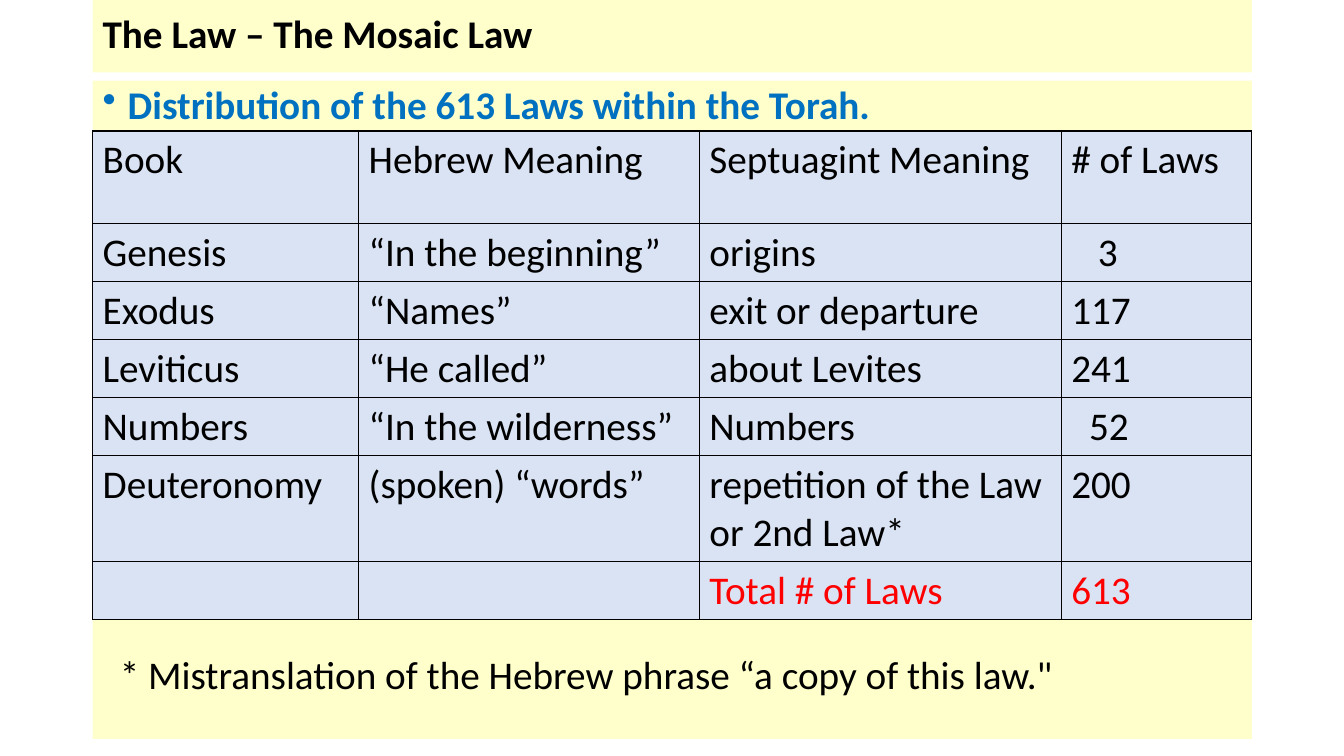
"""Builds the slide on how the 613 laws are spread over the Torah."""
import pptx
import pptx.dml.color
import pptx.enum.shapes
import pptx.enum.text
import pptx.oxml
import pptx.util
from lxml import etree

Pt = pptx.util.Pt

TITLE = "The Law – The Mosaic Law"
HEADING = "Distribution of the 613 Laws within the Torah."
FOOTNOTE = "* Mistranslation of the Hebrew phrase “a copy of this law.\""
BOOKS = [
    ("Book", "Hebrew Meaning", "Septuagint Meaning", "# of Laws"),
    ("Genesis", "“In the beginning”", "origins", "3"),
    ("Exodus", "“Names”", "exit or departure", "117"),
    ("Leviticus", "“He called”", "about Levites", "241"),
    ("Numbers", "“In the wilderness”", "Numbers", "52"),
    ("Deuteronomy", "(spoken) “words”", "repetition of the Law or 2nd Law*", "200"),
    ("", "", "Total # of Laws", "613"),
]
COLUMN_WIDTHS = [190, 243.4, 258.5, 136.1]
ROW_HEIGHTS = [66.2] + [41.4] * 4 + [75.6, 41.4]
COUNT_INDENTS = {1: 19, 2: 12.7}
LEFT, WIDTH = 66.2, 828
CELL_MARGIN = 7.2
BLACK, RED, BLUE = "000000", "FF0000", "0070C0"
CREAM, PALE_BLUE = "FFFFCC", "DAE3F3"
DRAWING_NS = "http://schemas.openxmlformats.org/drawingml/2006/main"


def paint(color_format, hex_color):
    color_format.rgb = pptx.dml.color.RGBColor.from_string(hex_color)


def fill_with(target, hex_color):
    target.fill.solid()
    paint(target.fill.fore_color, hex_color)


def write(text_frame, text, hex_color=BLACK, bold=False):
    paragraph = text_frame.paragraphs[0]
    paragraph.text = text
    paragraph.alignment = pptx.enum.text.PP_ALIGN.LEFT
    paragraph.font.name = "Calibri"
    paragraph.font.size = Pt(28)
    paragraph.font.bold = bold
    paint(paragraph.font.color, hex_color)
    return paragraph


def add_panel(slide, top, height, text, hex_color, anchor):
    panel = slide.shapes.add_shape(
        pptx.enum.shapes.MSO_SHAPE.RECTANGLE, Pt(LEFT), Pt(top), Pt(WIDTH), Pt(height))
    panel.shadow.inherit = False
    panel.line.fill.background()
    fill_with(panel, CREAM)
    panel.text_frame.vertical_anchor = anchor
    paragraph = write(panel.text_frame, text, hex_color, bold=True)
    paragraph.line_spacing = 0.9
    return paragraph


def add_bullet(paragraph):
    properties = paragraph._p.get_or_add_pPr()
    properties.set("marL", str(Pt(18)))
    properties.set("indent", str(-Pt(18)))
    bullet = etree.Element(f"{{{DRAWING_NS}}}buChar", char="•")
    properties.find(f"{{{DRAWING_NS}}}defRPr").addprevious(bullet)


def add_borders(cell):
    properties = cell._tc.get_or_add_tcPr()
    for position, side in enumerate(("lnL", "lnR", "lnT", "lnB")):
        properties.insert(position, pptx.oxml.parse_xml(
            f'<a:{side} xmlns:a="{DRAWING_NS}" w="{Pt(1)}"><a:solidFill>'
            f'<a:srgbClr val="{BLACK}"/></a:solidFill></a:{side}>'))


def add_books(slide):
    table = slide.shapes.add_table(
        len(BOOKS), len(COLUMN_WIDTHS), Pt(LEFT), Pt(93.6),
        Pt(WIDTH), Pt(sum(ROW_HEIGHTS))).table
    table.first_row = table.horz_banding = False
    for column, width in zip(table.columns, COLUMN_WIDTHS):
        column.width = Pt(width)
    for row, height, book in zip(table.rows, ROW_HEIGHTS, BOOKS):
        row.height = Pt(height)
        text_color = RED if book is BOOKS[-1] else BLACK
        for cell, text in zip(row.cells, book):
            fill_with(cell, PALE_BLUE)
            add_borders(cell)
            write(cell.text_frame, text, text_color)
            if text.isdigit():
                cell.margin_left = Pt(CELL_MARGIN + COUNT_INDENTS.get(len(text), 0))


def main():
    deck = pptx.Presentation()
    deck.slide_width, deck.slide_height = Pt(960), Pt(540)
    slide = deck.slides.add_slide(deck.slide_layouts[6])
    anchors = pptx.enum.text.MSO_ANCHOR
    add_panel(slide, 0, 51.8, TITLE, BLACK, anchors.MIDDLE)
    add_bullet(add_panel(slide, 57.6, 470.2, HEADING, BLUE, anchors.TOP))
    add_books(slide)
    footnote = slide.shapes.add_textbox(Pt(78.5), Pt(460.8), Pt(792), Pt(41))
    footnote.text_frame.word_wrap = True
    write(footnote.text_frame, FOOTNOTE)
    deck.save("out.pptx")


if __name__ == "__main__":
    main()
